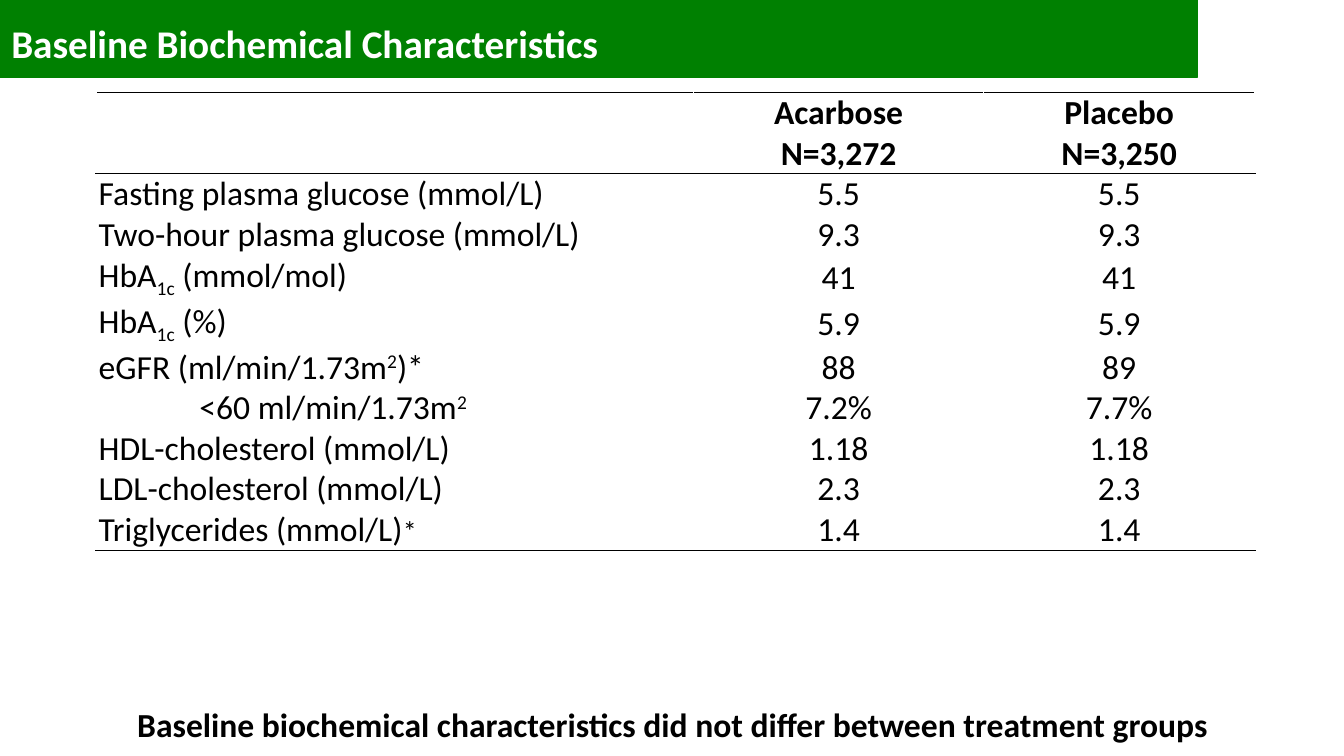
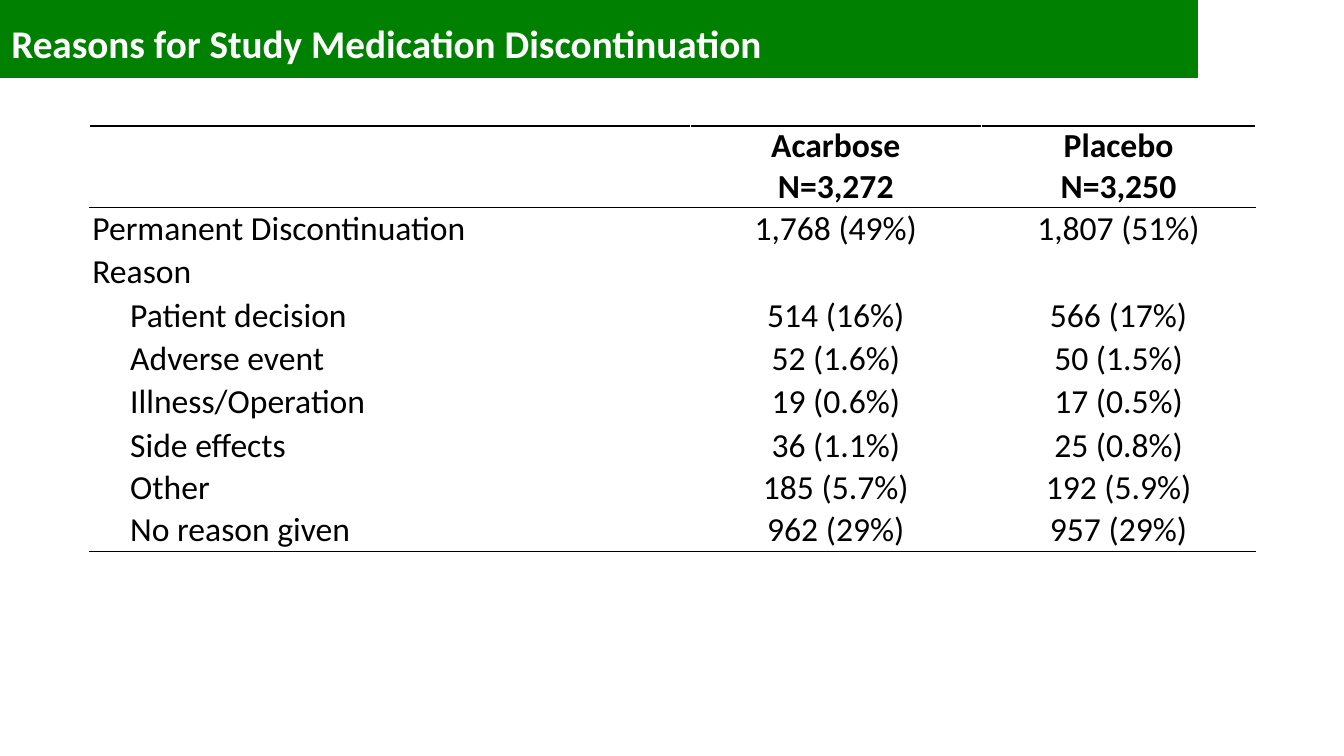
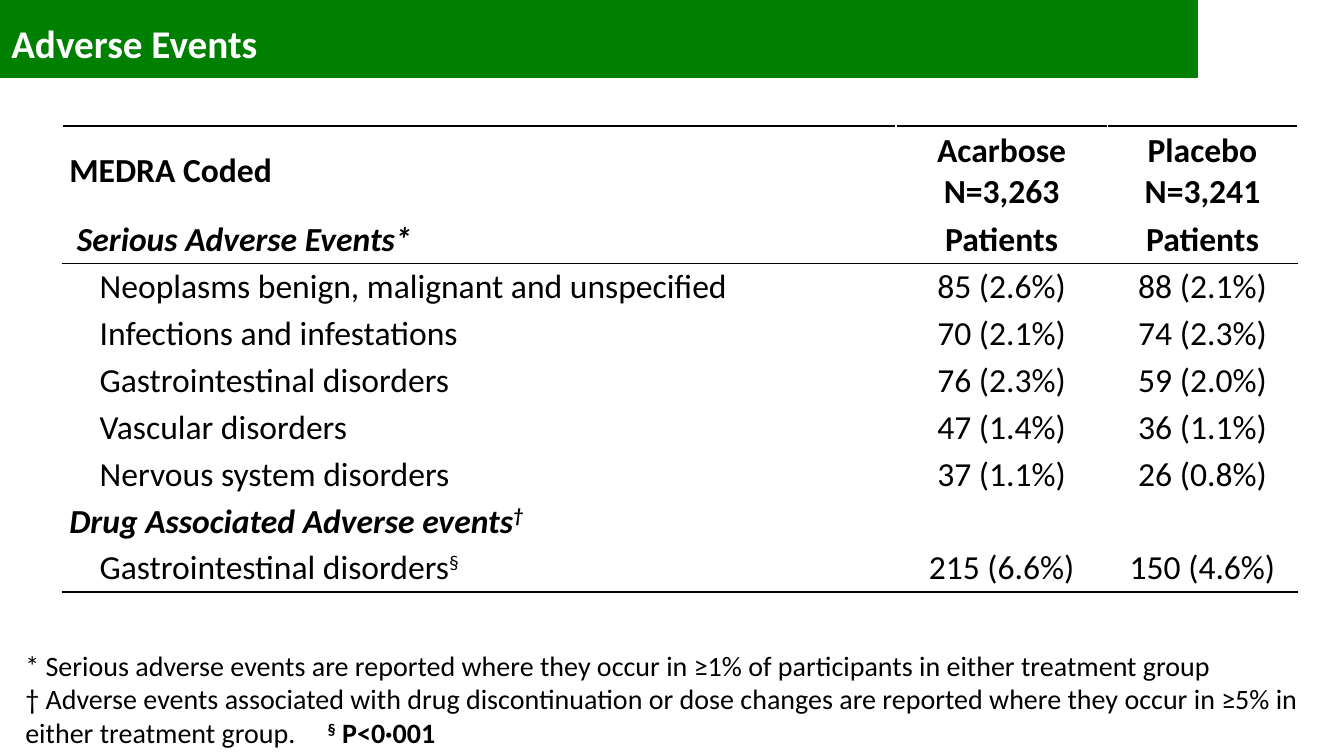
from dataclasses import dataclass
from lxml.etree import SubElement as Sub
from pptx import Presentation
from pptx.dml.color import RGBColor as RGB
from pptx.enum.shapes import MSO_SHAPE as Kind
from pptx.enum.text import MSO_ANCHOR as Anchor, PP_ALIGN as Align
from pptx.oxml import parse_xml
from pptx.oxml.ns import nsdecls, qn
from pptx.util import Pt

FACE = "Calibri"
GREEN, WHITE, BLACK = "008001", "FFFFFF", "000000"
WIDE, HIGH = 960, 540


@dataclass
class Row:
    label: str
    drug: str = ""
    sham: str = ""
    indent: float = 0
    slant: bool = False
    high: float = 29


def color(code):
    return RGB.from_string(code)


def add_runs(para, text):
    for part in text.split("|"):
        run = para.add_run()
        while part[0] in "^_~!":
            mark, part = part[0], part[1:]
            if mark == "~":
                run.font.size = Pt(20)
            elif mark == "!":
                run.font.bold = True
            else:
                base = {"^": "30000", "_": "-25000"}[mark]
                run._r.get_or_add_rPr().set("baseline", base)
        run.text = part


def write(frame, text, size, ink=BLACK, bold=False, slant=False,
          align=Align.LEFT, indent=0, tab=None):
    for i, line in enumerate(text.split("\n")):
        para = frame.paragraphs[0] if i == 0 else frame.add_paragraph()
        para.alignment = align
        props = para._p.get_or_add_pPr()
        if indent:
            props.set("marL", str(Pt(indent)))
        if tab:
            stops = Sub(props, qn("a:tabLst"))
            Sub(stops, qn("a:tab"), pos=str(Pt(tab)), algn="l")
        font = para.font
        font.name, font.size = FACE, Pt(size)
        font.bold, font.italic = bold, slant
        font.color.rgb = color(ink)
        if line:
            add_runs(para, line)


def add_text(slide, box, text, size, anchor=Anchor.TOP, **style):
    frame = slide.shapes.add_textbox(*map(Pt, box)).text_frame
    frame.word_wrap = True
    frame.vertical_anchor = anchor
    write(frame, text, size, **style)


def add_page(deck, title):
    slide = deck.slides.add_slide(deck.slide_layouts[6])
    band = slide.shapes.add_shape(Kind.RECTANGLE, 0, 0, Pt(855), Pt(55.5))
    band.shadow.inherit = False
    band.fill.solid()
    band.fill.fore_color.rgb = color(GREEN)
    band.line.color.rgb = color(GREEN)
    band.line.width = Pt(1)
    add_text(slide, (1, 10, WIDE - 1, 41), title, 28, Anchor.MIDDLE,
             ink=WHITE, bold=True)
    return slide


def set_edges(cell, top, low):
    props = cell._tc.get_or_add_tcPr()
    edges = {"L": WHITE, "R": WHITE, "T": top, "B": low}
    for i, (side, code) in enumerate(edges.items()):
        props.insert(i, parse_xml(
            f'<a:ln{side} {nsdecls("a")} w="{Pt(1)}"><a:solidFill>'
            f'<a:srgbClr val="{code}"/></a:solidFill></a:ln{side}>'))


def add_grid(slide, left, top, cols, rows, head=1, pad=2):
    high = sum(row.high for row in rows)
    box = map(Pt, (left, top, sum(cols), high))
    grid = slide.shapes.add_table(len(rows), len(cols), *box).table
    grid.first_row = grid.horz_banding = False
    for col, wide in zip(grid.columns, cols):
        col.width = Pt(wide)
    rules = {0, head, len(rows)}
    for r, row in enumerate(rows):
        grid.rows[r].height = Pt(row.high)
        for c, text in enumerate((row.label, row.drug, row.sham)):
            cell = grid.cell(r, c)
            cell.margin_left = cell.margin_right = Pt(pad)
            cell.margin_top = cell.margin_bottom = 0
            cell.vertical_anchor = Anchor.MIDDLE
            cell.fill.solid()
            cell.fill.fore_color.rgb = color(WHITE)
            set_edges(cell, *(BLACK if n in rules else WHITE
                              for n in (r, r + 1)))
            slant = row.slant and c == 0
            write(cell.text_frame, text, 24, bold=r < head or slant,
                  slant=slant, align=Align.CENTER if c else Align.LEFT,
                  indent=0 if c else row.indent)


def arms(label, drug, sham, high):
    return Row(label, f"Acarbose\nN={drug}", f"Placebo\nN={sham}", high=high)


def add_base(deck):
    slide = add_page(deck, "Baseline Biochemical Characteristics")
    add_grid(slide, 68.5, 66, (427, 207, 194), [
        arms("", "3,272", "3,250", 58),
        Row("Fasting plasma glucose (mmol/L)", "5.5", "5.5"),
        Row("Two-hour plasma glucose (mmol/L)", "9.3", "9.3"),
        Row("HbA|_1c| (mmol/mol)", "41", "41", high=33),
        Row("HbA|_1c| (%)", "5.9", "5.9", high=33),
        Row("eGFR (ml/min/1.73m|^2|)*", "88", "89"),
        Row("<60 ml/min/1.73m|^2", "7.2%", "7.7%", indent=72),
        Row("HDL-cholesterol (mmol/L)", "1.18", "1.18"),
        Row("LDL-cholesterol (mmol/L)", "2.3", "2.3"),
        Row("Triglycerides (mmol/L)|~*", "1.4", "1.4"),
    ])
    add_text(slide, (1, 499, WIDE - 1, 36),
             "Baseline biochemical characteristics did not differ "
             "between treatment groups", 24, bold=True, align=Align.CENTER)


def add_stops(deck):
    slide = add_page(deck, "Reasons for Study Medication Discontinuation")
    causes = [
        ("Patient decision", "514 (16%)", "566 (17%)"),
        ("Adverse event", "52 (1.6%)", "50 (1.5%)"),
        ("Illness/Operation", "19 (0.6%)", "17 (0.5%)"),
        ("Side effects", "36 (1.1%)", "25 (0.8%)"),
        ("Other", "185 (5.7%)", "192 (5.9%)"),
        ("No reason given", "962 (29%)", "957 (29%)"),
    ]
    add_grid(slide, 64, 90, (429, 208, 196), [
        arms("", "3,272", "3,250", 58),
        Row("Permanent Discontinuation", "1,768 (49%)", "1,807 (51%)",
            high=31),
        Row("Reason", high=31),
        *(Row(*cause, indent=27, high=29 if cause[0] == "Other" else 31)
          for cause in causes),
    ])


def add_harms(deck):
    slide = add_page(deck, "Adverse Events")
    tall = 33.5
    harms = [
        ("Neoplasms benign, malignant and unspecified",
         "85 (2.6%)", "88 (2.1%)"),
        ("Infections and infestations", "70 (2.1%)", "74 (2.3%)"),
        ("Gastrointestinal disorders", "76 (2.3%)", "59 (2.0%)"),
        ("Vascular disorders", "47 (1.4%)", "36 (1.1%)"),
        ("Nervous system disorders", "37 (1.1%)", "26 (0.8%)"),
    ]
    add_grid(slide, 44.5, 90, (595.5, 151, 136), [
        arms("MEDRA Coded", "3,263", "3,241", 65),
        Row("Serious Adverse Events*", "Patients", "Patients",
            indent=5.4, slant=True, high=tall),
        *(Row(*harm, indent=21.7, high=tall) for harm in harms),
        Row("Drug Associated Adverse events|^†", slant=True, high=tall),
        Row("Gastrointestinal disorders|^§", "215 (6.6%)", "150 (4.6%)",
            indent=21.7, high=tall),
    ], head=2, pad=5)
    add_text(slide, (11, 459.5, 938, 80),
             "* Serious adverse events are reported where they occur in "
             "≥1% of participants in either treatment group\n"
             "† Adverse events associated with drug discontinuation or dose "
             "changes are reported where they occur in ≥5% in either "
             "treatment group.\t|!^§|! P<0·001", 20, tab=216)


def main():
    deck = Presentation()
    deck.slide_width, deck.slide_height = Pt(WIDE), Pt(HIGH)
    for add in (add_base, add_stops, add_harms):
        add(deck)
    deck.save("out.pptx")


if __name__ == "__main__":
    main()
